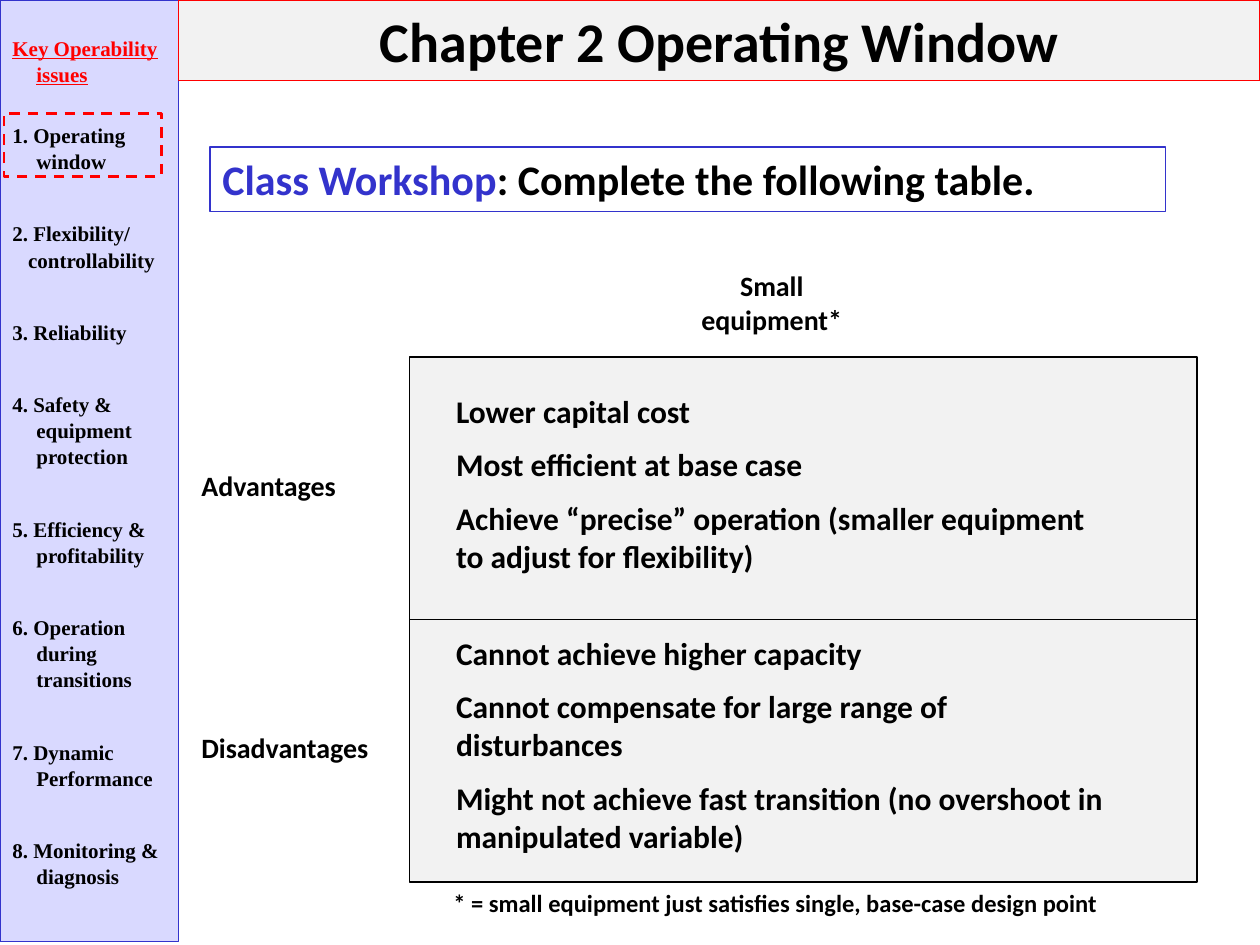
from lxml.etree import SubElement
from pptx import Presentation
from pptx.dml.color import RGBColor
from pptx.enum.dml import MSO_LINE
from pptx.enum.shapes import MSO_SHAPE
from pptx.enum.text import MSO_ANCHOR, MSO_AUTO_SIZE, PP_ALIGN
from pptx.oxml.ns import qn
from pptx.util import Pt

BLACK = RGBColor(0x00, 0x00, 0x00)
BLUE = RGBColor(0x33, 0x33, 0xCC)
RED = RGBColor(0xFF, 0x00, 0x00)
GREY = RGBColor(0xF2, 0xF2, 0xF2)
LAVENDER = RGBColor(0xD9, 0xD9, 0xFF)

prs = Presentation()
prs.slide_width, prs.slide_height = Pt(720), Pt(540)
slide = prs.slides.add_slide(prs.slide_layouts[3])
shapes = slide.shapes
title, advantages, disadvantages = slide.placeholders


def add_box(left, top, width, height, fill, line, weight=0.75):
    box = shapes.add_shape(MSO_SHAPE.RECTANGLE, Pt(left), Pt(top), Pt(width), Pt(height))
    box.shadow.inherit = False
    if fill is None:
        box.fill.background()
    else:
        box.fill.solid()
        box.fill.fore_color.rgb = fill
    box.line.color.rgb = line
    box.line.width = Pt(weight)
    return box


def write(shape, paragraphs, size, font="Calibri", align=PP_ALIGN.LEFT, gap=0):
    """Fill a shape with bold paragraphs, each a list of (text, colour) runs."""
    frame = shape.text_frame
    frame.word_wrap = True
    frame.auto_size = MSO_AUTO_SIZE.NONE
    frame.vertical_anchor = MSO_ANCHOR.TOP
    for index, runs in enumerate(paragraphs):
        paragraph = frame.add_paragraph() if index else frame.paragraphs[0]
        paragraph.alignment = align
        paragraph.space_before = Pt(gap if index else 0)
        for text, color in runs:
            run = paragraph.add_run()
            run.text = text
            run.font.name = font
            run.font.size = Pt(size)
            run.font.bold = True
            run.font.color.rgb = color
    return frame


# Table panels with their lists and row labels
ROW_TOP, ROW_HEIGHT = 204, 150
rows = [
    ("Advantages", 264, advantages, 220.3, 378, 116.6, [
        "Lower capital cost",
        "Most efficient at base case",
        "Achieve “precise” operation (smaller equipment to adjust for flexibility)",
    ]),
    ("Disadvantages", 414, disadvantages, 358.6, 390, 138.2, [
        "Cannot achieve higher capacity",
        "Cannot compensate for large range of disturbances",
        "Might not achieve fast transition (no overshoot in manipulated variable)",
    ]),
]
for row, (label, label_top, points, top, width, height, lines) in enumerate(rows):
    add_box(234, ROW_TOP + row * ROW_HEIGHT, 450, ROW_HEIGHT, GREY, BLACK)
    points.element.getparent().append(points.element)
    points.left, points.top, points.width, points.height = Pt(253.4), Pt(top), Pt(width), Pt(height)
    points.fill.solid()
    points.fill.fore_color.rgb = GREY
    frame = write(points, [[(line, BLACK)] for line in lines], 18, gap=9)
    for paragraph in frame.paragraphs:
        properties = paragraph._p.get_or_add_pPr()
        properties.set("marL", "0")
        properties.set("indent", "0")
        SubElement(properties, qn("a:buNone"))
    row_label = shapes.add_textbox(Pt(108), Pt(label_top), Pt(126), Pt(26.6))
    write(row_label, [[(label, BLACK)]], 16)

column_label = shapes.add_textbox(Pt(378), Pt(150), Pt(126), Pt(46))
write(column_label, [[("Small equipment*", BLACK)]], 16, align=PP_ALIGN.CENTER)
footnote = shapes.add_textbox(Pt(252), Pt(504), Pt(390), Pt(24))
write(footnote, [[("* = small equipment just satisfies single, base-case design point", BLACK)]], 14)

workshop = add_box(120, 84, 546, 36.7, None, BLUE)
write(workshop, [[("Class Workshop", BLUE), (": Complete the following table.", BLACK)]], 24)

# Sidebar of operability issues
HANG = 13.7
issues = [
    "1. Operating window",
    "2. Flexibility/",
    "controllability",
    "3. Reliability",
    "4. Safety & equipment protection",
    "5. Efficiency & profitability",
    "6. Operation during transitions",
    "7. Dynamic Performance",
    "8. Monitoring & diagnosis",
]
sidebar = add_box(0, 0, 102.2, 538, LAVENDER, BLUE)
sidebar_text = write(
    sidebar,
    [[("Key Operability issues", RED)]] + [[(issue, BLACK)] for issue in issues],
    12, font="Times New Roman", gap=26.3,
)
sidebar_text.margin_top = Pt(19.5)
heading, first_issue, _, flexibility_rest = sidebar_text.paragraphs[:4]
for paragraph in sidebar_text.paragraphs:
    paragraph.line_spacing = 1.04
    first_line = Pt(9 - HANG) if paragraph is flexibility_rest else Pt(-HANG)
    properties = paragraph._p.get_or_add_pPr()
    properties.set("marL", str(Pt(HANG)))
    properties.set("indent", str(first_line))
heading.runs[0].font.underline = True
first_issue.space_before = Pt(20)
flexibility_rest.space_before = Pt(0)
# The wrapped half of issue 2 starts between the number and the hanging indent
flexibility_rest._p.get_or_add_pPr().set("indent", str(Pt(9 - HANG)))

current_issue = add_box(2.2, 64.8, 90, 36, None, RED, 1.5)
current_issue.line.dash_style = MSO_LINE.DASH

# Title bar
title.element.getparent().append(title.element)
title.left, title.top, title.width, title.height = Pt(102.2), Pt(0), Pt(617.8), Pt(46)
title.fill.solid()
title.fill.fore_color.rgb = GREY
title.line.color.rgb = RED
title.line.width = Pt(0.75)
write(title, [[("Chapter 2 Operating Window", BLACK)]], 32, align=PP_ALIGN.CENTER)

prs.save("out.pptx")
